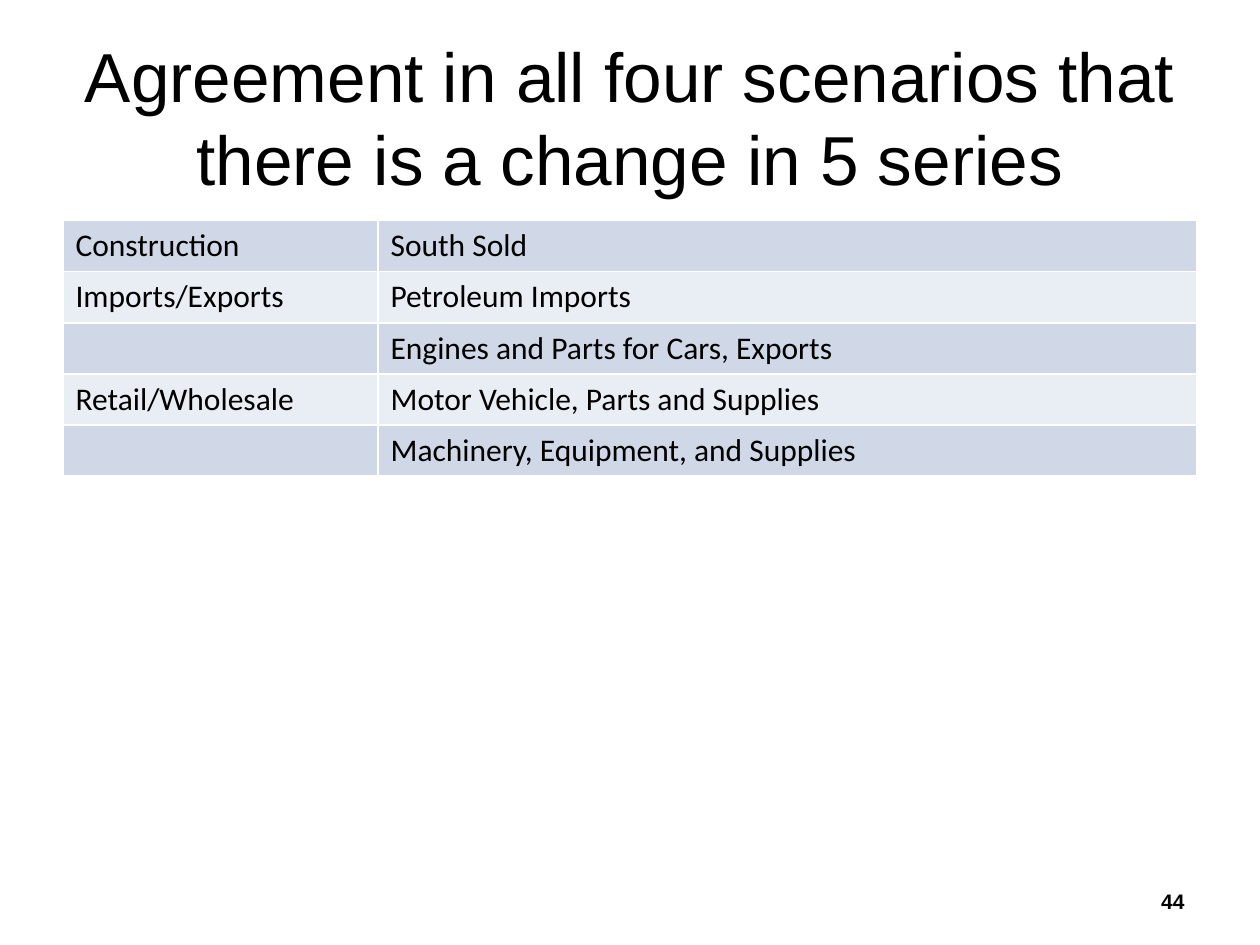
from lxml import etree
from pptx import Presentation
from pptx.dml.color import RGBColor
from pptx.enum import text
from pptx.oxml import ns
from pptx.util import Inches, Pt

COLORS = {"text": "000000", "border": "FFFFFF", "odd": "D0D8E8", "even": "E9EDF4"}

SERIES = [
    ("Construction", "South Sold"),
    ("Imports/Exports", "Petroleum Imports"),
    ("", "Engines and Parts for Cars, Exports"),
    ("Retail/Wholesale", "Motor Vehicle, Parts and Supplies"),
    ("", "Machinery, Equipment, and Supplies"),
]


def style_font(font, name, size, bold=False):
    font.name = name
    font.size = Pt(size)
    font.bold = bold
    font.color.rgb = RGBColor.from_string(COLORS["text"])


def add_label(slide, box, words, size, alignment, bold=False):
    frame = slide.shapes.add_textbox(*map(Inches, box)).text_frame
    frame.word_wrap = True
    frame.vertical_anchor = text.MSO_ANCHOR.MIDDLE
    paragraph = frame.paragraphs[0]
    paragraph.text = words
    paragraph.alignment = alignment
    style_font(paragraph.font, "Arial", size, bold)


def add_borders(cell):
    properties = cell._tc.get_or_add_tcPr()
    for side in ("lnL", "lnR", "lnT", "lnB"):
        line = etree.SubElement(properties, ns.qn(f"a:{side}"), w=str(Pt(1)))
        fill = etree.SubElement(line, ns.qn("a:solidFill"))
        etree.SubElement(fill, ns.qn("a:srgbClr"), val=COLORS["border"])


def add_series_table(slide, box):
    left, top, width, height = map(Inches, box)
    table = slide.shapes.add_table(len(SERIES), 2, left, top, width, height).table
    table.first_row = False
    table.columns[0].width = Inches(2.5)
    table.columns[1].width = width - Inches(2.5)
    for row, names in enumerate(SERIES):
        for column, name in enumerate(names):
            cell = table.cell(row, column)
            add_borders(cell)
            cell.fill.solid()
            cell.fill.fore_color.rgb = RGBColor.from_string(COLORS["even" if row % 2 else "odd"])
            cell.text = name
            style_font(cell.text_frame.paragraphs[0].font, "Calibri", 18)


def main():
    presentation = Presentation()
    presentation.slide_width = Inches(10)
    presentation.slide_height = Inches(7.5)
    slide = presentation.slides.add_slide(presentation.slide_layouts[6])
    add_label(slide, (0.5, 0.3, 9, 1.25),
              "Agreement in all four scenarios that there is a change in 5 series",
              39.6, text.PP_ALIGN.CENTER)
    add_series_table(slide, (0.5, 1.75, 9, 2.03))
    add_label(slide, (7.17, 6.95, 2.33, 0.4), "44", 12, text.PP_ALIGN.RIGHT, bold=True)
    presentation.save("out.pptx")


if __name__ == "__main__":
    main()
